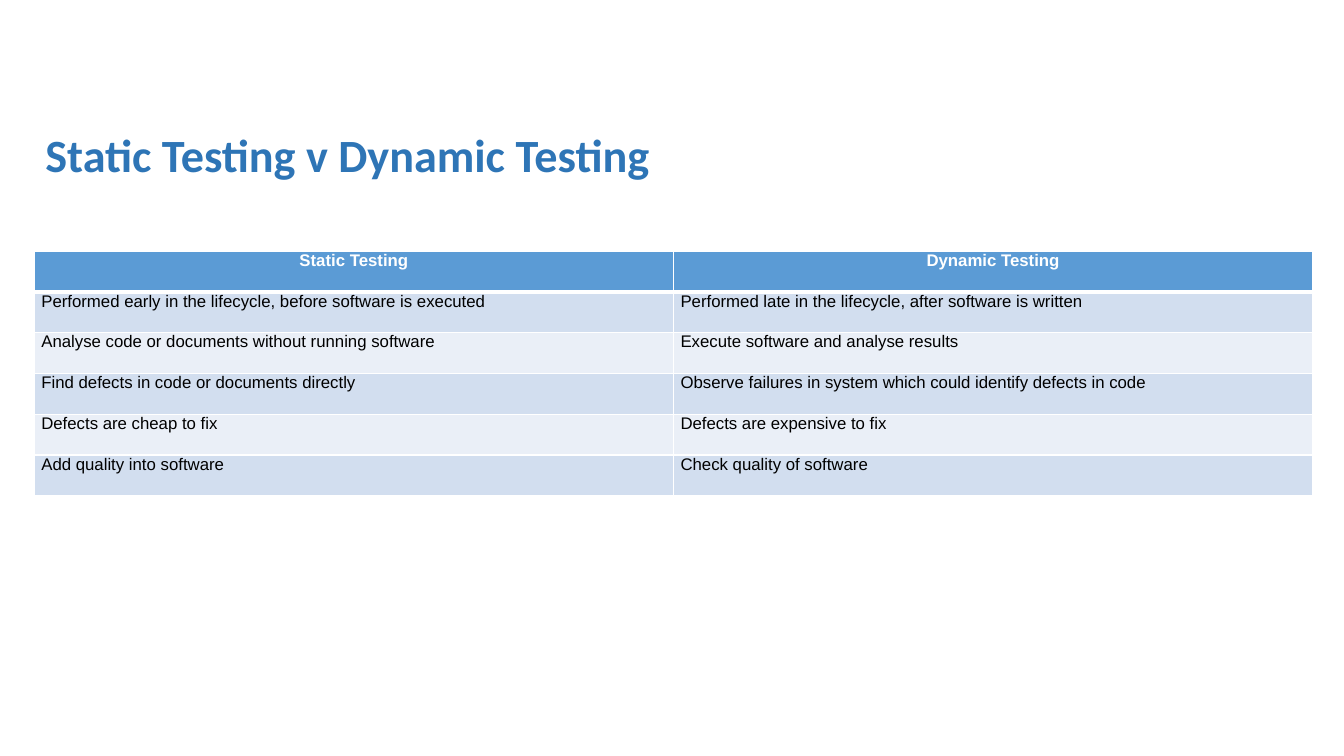
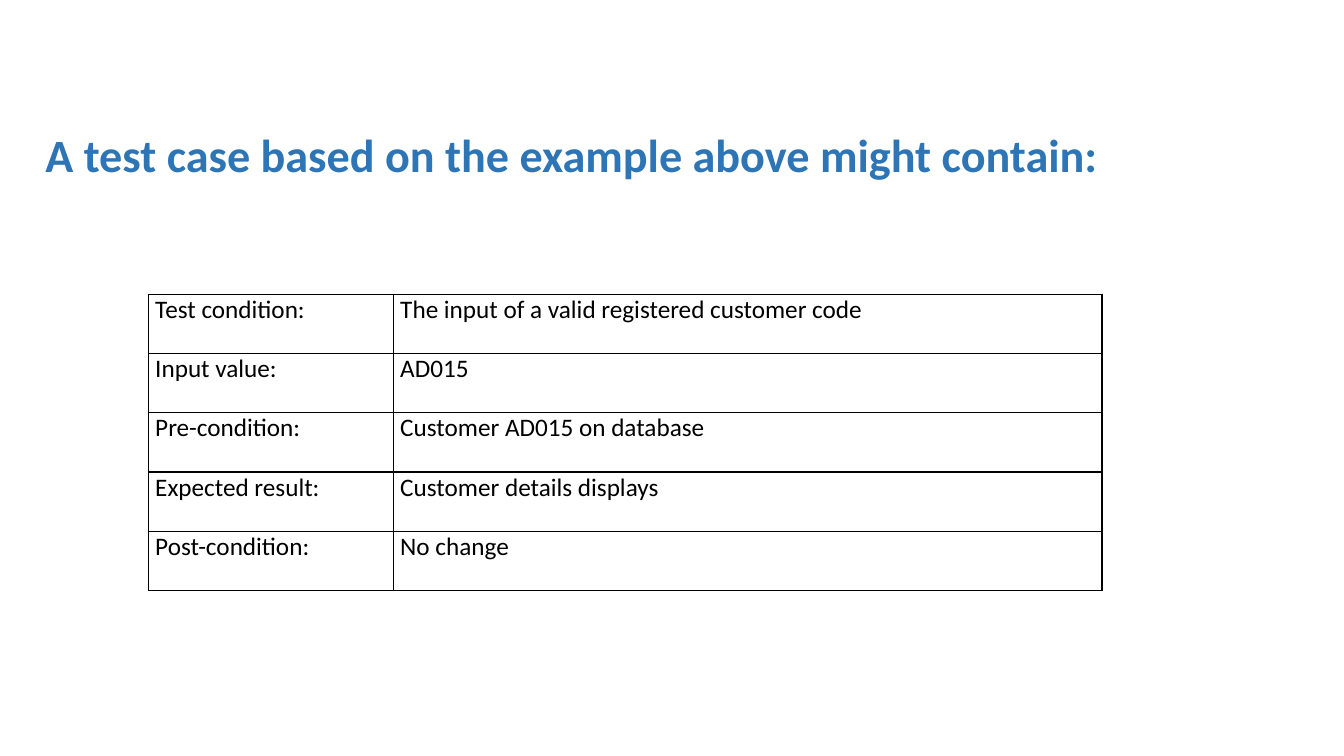
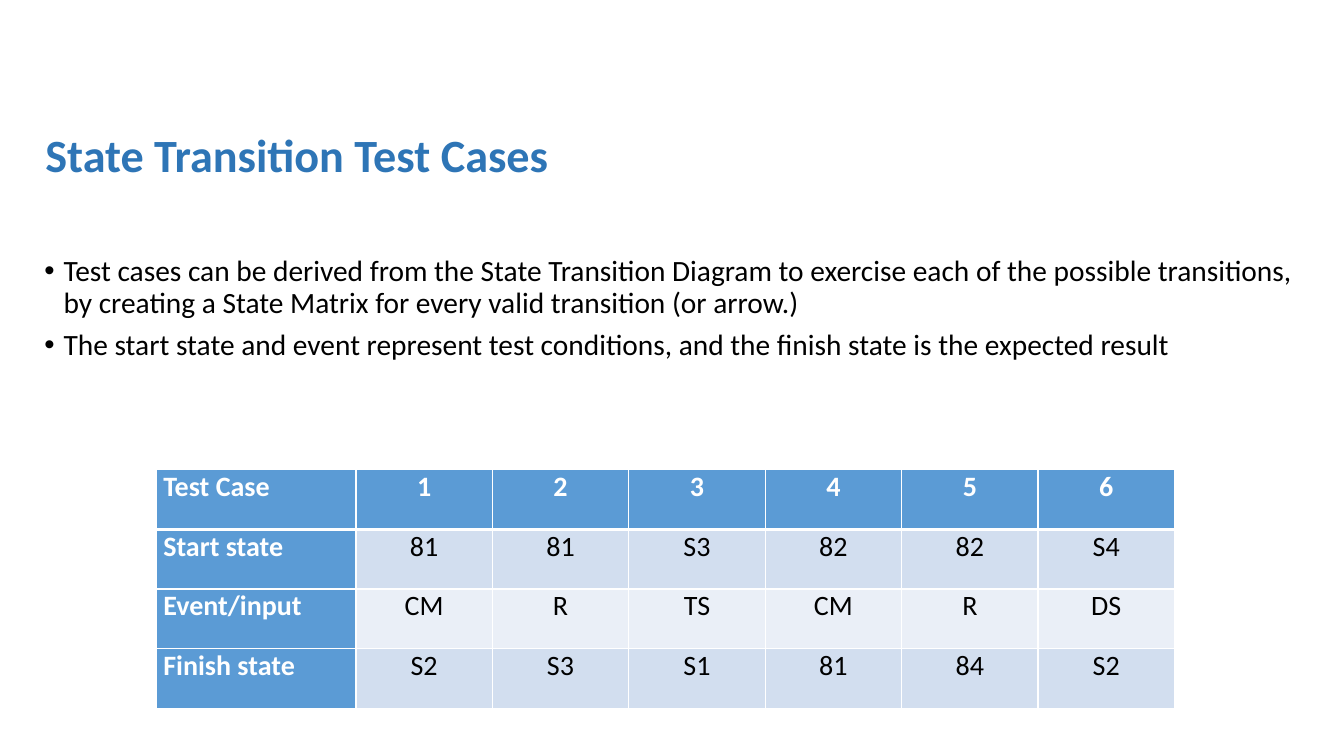
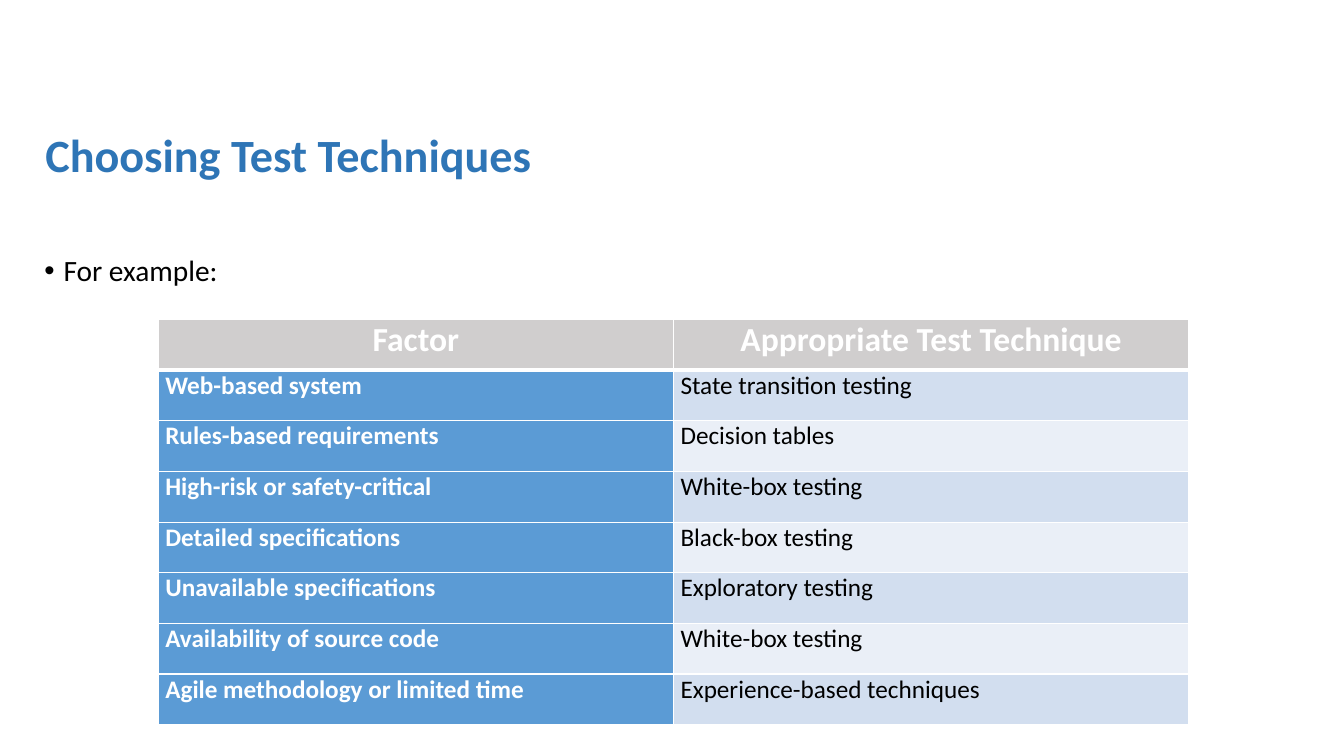
from lxml.etree import SubElement
from pptx import Presentation
from pptx.dml.color import RGBColor
from pptx.enum.text import MSO_ANCHOR, MSO_AUTO_SIZE, PP_ALIGN
from pptx.oxml.ns import qn
from pptx.util import Emu, Pt

BLUE, TITLE_BLUE, GREY = "5B9BD5", "2E75B6", "D0CECE"
BANDS = ("D2DEEF", "EAEFF7")
WHITE, BLACK = "FFFFFF", "000000"
TITLE_BOX = (35, 107, 1268, 99)
BODY_BOX = (34, 249, 1268, 451)
LEFT, CENTER = PP_ALIGN.LEFT, PP_ALIGN.CENTER


def px(n):
    """Turn px, 100 to the inch, into EMU."""
    return Emu(n * 9144)


def rgb(color):
    """Turn a hex string into a colour."""
    return RGBColor.from_string(color)


def write(p, text, size=18, font="Calibri", color=BLACK, bold=False, align=LEFT,
          spacing=None, before=0):
    """Write formatted text into a paragraph."""
    r = p.add_run()
    r.text = text
    r.font.size, r.font.name, r.font.bold = Pt(size), font, bold
    r.font.color.rgb = rgb(color)
    p.alignment, p.line_spacing, p.space_before = align, spacing, Pt(before)


def place(sp, box, anchor):
    """Move a placeholder to a box and return its text frame."""
    sp.left, sp.top, sp.width, sp.height = map(px, box)
    tf = sp.text_frame
    tf.auto_size, tf.vertical_anchor, tf.word_wrap = MSO_AUTO_SIZE.NONE, anchor, True
    return tf


def add_bullets(sp, box, items):
    """Fill a body placeholder with bulleted paragraphs."""
    tf = place(sp, box, MSO_ANCHOR.TOP)
    for i, item in enumerate(items):
        p = tf.add_paragraph() if i else tf.paragraphs[0]
        pPr = p._p.get_or_add_pPr()
        pPr.set("marL", str(px(19)))
        pPr.set("indent", str(px(-19)))
        SubElement(pPr, qn("a:buChar"), char="•")
        write(p, item, size=21, spacing=0.9, before=7.5 if i else 0)


def add_slide(prs, title, bullets=()):
    """Add a slide with the shared title and optional bullets."""
    s = prs.slides.add_slide(prs.slide_layouts[1 if bullets else 5])
    tf = place(s.shapes.title, TITLE_BOX, MSO_ANCHOR.MIDDLE)
    write(tf.paragraphs[0], title, size=33, color=TITLE_BLUE, bold=True, spacing=0.9)
    if bullets:
        add_bullets(s.placeholders[1], BODY_BOX, bullets)
    return s


def add_borders(cell, color, widths):
    """Draw the left, right, top and bottom borders of a cell."""
    tcPr = cell._tc.get_or_add_tcPr()
    for side, width in zip("LRTB", widths):
        ln = SubElement(tcPr, qn(f"a:ln{side}"), w=str(Pt(width)))
        fill = SubElement(ln, qn("a:solidFill"))
        SubElement(fill, qn("a:srgbClr"), val=color)


def fill_cell(cell, text, fill=None, border=WHITE, widths=(1, 1, 1, 1), **fmt):
    """Set the text, borders and fill of a cell."""
    cell.margin_left = cell.margin_right = px(7)
    cell.margin_top = cell.margin_bottom = 0
    write(cell.text_frame.paragraphs[0], text, **fmt)
    add_borders(cell, border, widths)
    if fill:
        cell.fill.solid()
        cell.fill.fore_color.rgb = rgb(fill)
    else:
        cell.fill.background()


def new_table(s, box, rows, first_col):
    """Add a table with equal rows and equal columns after the first."""
    x, y, w, h = box
    n = len(rows[0])
    tbl = s.shapes.add_table(len(rows), n, px(x), px(y), px(w), px(h)).table
    tbl.first_row = tbl.horz_banding = False
    for i, col in enumerate(tbl.columns):
        col.width = Emu(px(w - first_col) // (n - 1)) if i else px(first_col)
    return tbl


def add_plain_table(s, box, rows, first_col):
    """Add an unfilled table with black borders."""
    tbl = new_table(s, box, rows, first_col)
    for i, row in enumerate(rows):
        for j, text in enumerate(row):
            fill_cell(tbl.cell(i, j), text, border=BLACK)


def add_banded_table(s, box, rows, first_col, size, head_size=None, head_fill=BLUE,
                     font="Calibri", lead=True, head_aligns=(CENTER, CENTER), align=LEFT):
    """Add a table with a header row, banded rows and an optional lead column."""
    tbl = new_table(s, box, rows, first_col)
    for i, row in enumerate(rows):
        for j, text in enumerate(row):
            head, side = i == 0, lead and j == 0
            strong = head or side
            fill = head_fill if head else BLUE if side else BANDS[(i - 1) % 2]
            fill_cell(tbl.cell(i, j), text, fill=fill,
                      widths=(1, 1, 3 if i == 1 else 1, 3 if head else 1),
                      size=head_size or size if head else size, font=font,
                      color=WHITE if strong else BLACK, bold=strong,
                      align=head_aligns[min(j, 1)] if head else LEFT if j == 0 else align)


def add_comparison(prs):
    """Add the slide comparing static and dynamic testing."""
    s = add_slide(prs, "Static Testing v Dynamic Testing")
    rows = [
        ("Static Testing", "Dynamic Testing"),
        ("Performed early in the lifecycle, before software is executed",
         "Performed late in the lifecycle, after software is written"),
        ("Analyse code or documents without running software",
         "Execute software and analyse results"),
        ("Find defects in code or documents directly",
         "Observe failures in system which could identify defects in code"),
        ("Defects are cheap to fix", "Defects are expensive to fix"),
        ("Add quality into software", "Check quality of software"),
    ]
    add_banded_table(s, (34, 249, 1268, 243), rows, 634, 12, font="Arial", lead=False)


def add_test_case(prs):
    """Add the slide with an example test case."""
    s = add_slide(prs, "A test case based on the example above might contain:")
    rows = [
        ("Test condition:", "The input of a valid registered customer code"),
        ("Input value:", "AD015"),
        ("Pre-condition:", "Customer AD015 on database"),
        ("Expected result:", "Customer details displays"),
        ("Post-condition:", "No change"),
    ]
    add_plain_table(s, (147, 292, 946, 294), rows, 243)


def add_state_matrix(prs):
    """Add the slide with the state transition matrix."""
    s = add_slide(prs, "State Transition Test Cases", [
        "Test cases can be derived from the State Transition Diagram to exercise each of "
        "the possible transitions, by creating a State Matrix for every valid transition "
        "(or arrow.)",
        "The start state and event represent test conditions, and the finish state is the "
        "expected result",
    ])
    rows = [
        ("Test Case", "1", "2", "3", "4", "5", "6"),
        ("Start state", "81", "81", "S3", "82", "82", "S4"),
        ("Event/input", "CM", "R", "TS", "CM", "R", "DS"),
        ("Finish state", "S2", "S3", "S1", "81", "84", "S2"),
    ]
    add_banded_table(s, (155, 466, 1010, 237), rows, 198, 20,
                     head_aligns=(LEFT, CENTER), align=CENTER)


def add_techniques(prs):
    """Add the slide matching factors to test techniques."""
    s = add_slide(prs, "Choosing Test Techniques", ["For example:"])
    rows = [
        ("Factor", "Appropriate Test Technique"),
        ("Web-based system", "State transition testing"),
        ("Rules-based requirements", "Decision tables"),
        ("High-risk or safety-critical", "White-box testing"),
        ("Detailed specifications", "Black-box testing"),
        ("Unavailable specifications", "Exploratory testing"),
        ("Availability of source code", "White-box testing"),
        ("Agile methodology or limited time", "Experience-based techniques"),
    ]
    add_banded_table(s, (157, 317, 1022, 402), rows, 511, 18, head_size=24, head_fill=GREY)


def main():
    """Build and save the presentation."""
    prs = Presentation()
    prs.slide_width, prs.slide_height = px(1333), px(750)
    for add in (add_comparison, add_test_case, add_state_matrix, add_techniques):
        add(prs)
    prs.save("out.pptx")


if __name__ == "__main__":
    main()
